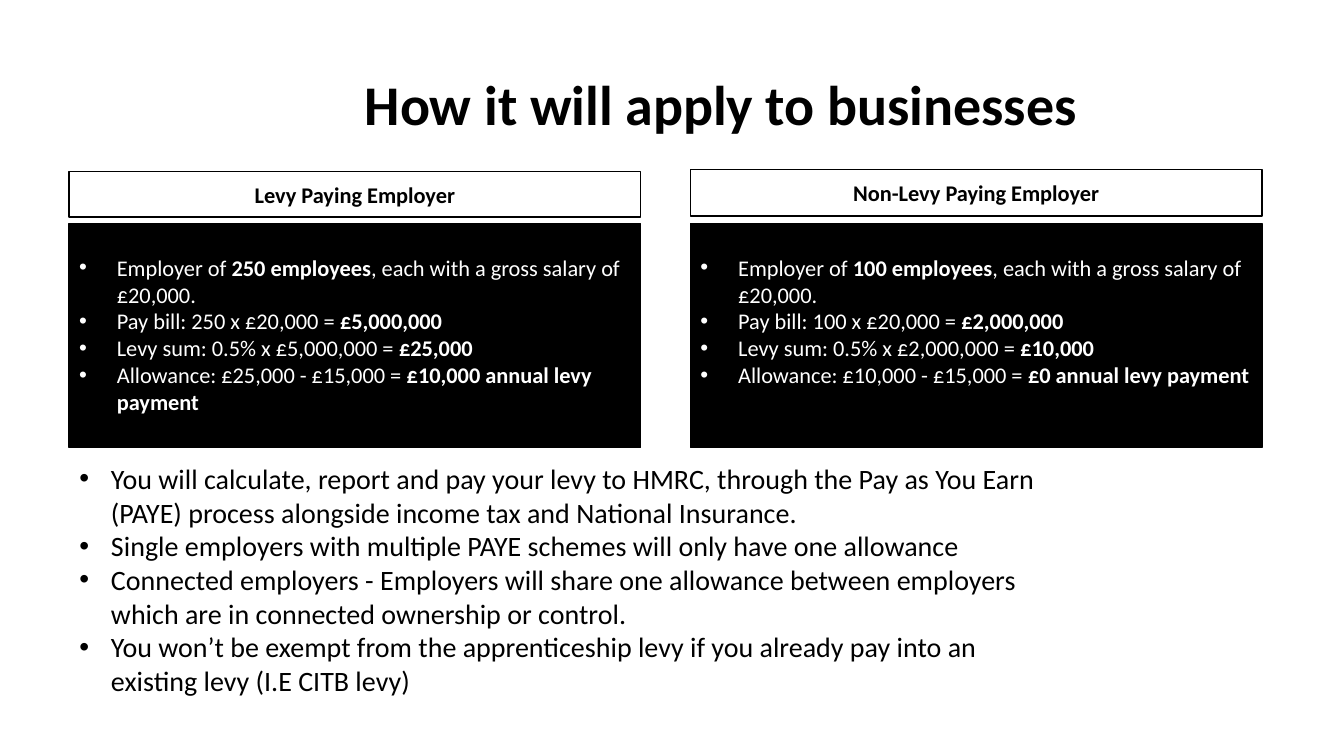
from dataclasses import dataclass

from lxml import etree
from pptx import Presentation
from pptx.dml.color import RGBColor
from pptx.enum import shapes, text
from pptx.oxml import ns
from pptx.util import Pt


@dataclass(frozen=True)
class Theme:
    font: str = "Calibri"
    dark: RGBColor = RGBColor(0, 0, 0)
    light: RGBColor = RGBColor(255, 255, 255)
    title: int = 40
    body: int = 20
    panel: int = 16


THEME = Theme()
WIDE = 408.24  # panel width
TOP = 159.84  # panel top
SALARY = 20000
RELIEF = 15000

NOTES = [
    "You will calculate, report and pay your levy to HMRC, through the Pay as "
    "You Earn (PAYE) process alongside income tax and National Insurance.",
    "Single employers with multiple PAYE schemes will only have one allowance",
    "Connected employers - Employers will share one allowance between employers "
    "which are in connected ownership or control.",
    "You won’t be exempt from the apprenticeship levy if you already pay into an "
    "existing levy (I.E CITB levy)",
]


def add_run(para, words, size, color, bold=False):
    run = para.add_run()
    run.text = words
    font = run.font
    font.name, font.size, font.bold = THEME.font, Pt(size), bold
    font.color.rgb = color


def add_bullet(para, indent):
    props = para._p.get_or_add_pPr()
    props.set("marL", str(Pt(indent)))
    props.set("indent", str(-Pt(indent)))
    face = etree.SubElement(props, ns.qn("a:buFont"))
    face.set("typeface", "Arial")
    mark = etree.SubElement(props, ns.qn("a:buChar"))
    mark.set("char", "•")


def fill_list(frame, items, size, color, indent):
    """Each item is a list of (words, bold) pairs."""
    for i, item in enumerate(items):
        para = frame.add_paragraph() if i else frame.paragraphs[0]
        para.alignment = text.PP_ALIGN.LEFT
        add_bullet(para, indent)
        for words, bold in item:
            add_run(para, words, size, color, bold)


def add_text(slide, left, top, width, height):
    box = slide.shapes.add_textbox(Pt(left), Pt(top), Pt(width), Pt(height))
    box.text_frame.word_wrap = True
    return box.text_frame


def add_box(slide, left, top, height, fill):
    box = slide.shapes.add_shape(
        shapes.MSO_SHAPE.RECTANGLE, Pt(left), Pt(top), Pt(WIDE), Pt(height))
    box.shadow.inherit = False
    box.fill.solid()
    box.fill.fore_color.rgb = fill
    box.line.color.rgb = THEME.dark
    box.line.width = Pt(1)
    box.text_frame.word_wrap = True
    return box.text_frame


def add_head(slide, left, top, height, words):
    frame = add_box(slide, left, top, height, THEME.light)
    frame.vertical_anchor = text.MSO_ANCHOR.MIDDLE
    para = frame.paragraphs[0]
    para.alignment = text.PP_ALIGN.CENTER
    add_run(para, words, THEME.panel, THEME.dark, True)


def levy_sums(staff):
    """Work out the example lines for an employer of this size."""
    bill = staff * SALARY
    levy = bill // 200  # 0.5%
    due = max(levy - RELIEF, 0)
    return [
        [("Employer of ", False), (f"{staff} employees", True),
         (f", each with a gross salary of £{SALARY:,}.", False)],
        [(f"Pay bill: {staff} x £{SALARY:,} = ", False), (f"£{bill:,}", True)],
        [(f"Levy sum: 0.5% x £{bill:,} = ", False), (f"£{levy:,}", True)],
        [(f"Allowance: £{levy:,} - £{RELIEF:,} = ", False),
         (f"£{due:,} annual levy payment", True)],
    ]


def add_panel(slide, left, staff):
    frame = add_box(slide, left, TOP, 160, THEME.dark)
    frame.vertical_anchor = text.MSO_ANCHOR.TOP
    frame.margin_top = Pt(21.5)
    fill_list(frame, levy_sums(staff), THEME.panel, THEME.light, 27)


def main():
    deck = Presentation()
    deck.slide_width, deck.slide_height = Pt(960), Pt(540)
    slide = deck.slides.add_slide(deck.slide_layouts[6])

    # Title
    frame = add_text(slide, 253.44, 46, 625.68, 55.7)
    add_run(frame.paragraphs[0], "How it will apply to businesses",
            THEME.title, THEME.dark, True)

    # Employer examples: left, head top, head height, head, staff
    for left, top, height, head, staff in (
            (49.4, 122.6, 32.4, "Levy Paying Employer", 250),
            (493.2, 121.3, 33, "Non-Levy Paying Employer", 100)):
        add_head(slide, left, top, height, head)
        add_panel(slide, left, staff)

    # Notes
    frame = add_text(slide, 49.68, 326.16, 713.52, 177)
    fill_list(frame, [[(note, False)] for note in NOTES],
              THEME.body, THEME.dark, 22.5)

    deck.save("out.pptx")


if __name__ == "__main__":
    main()
